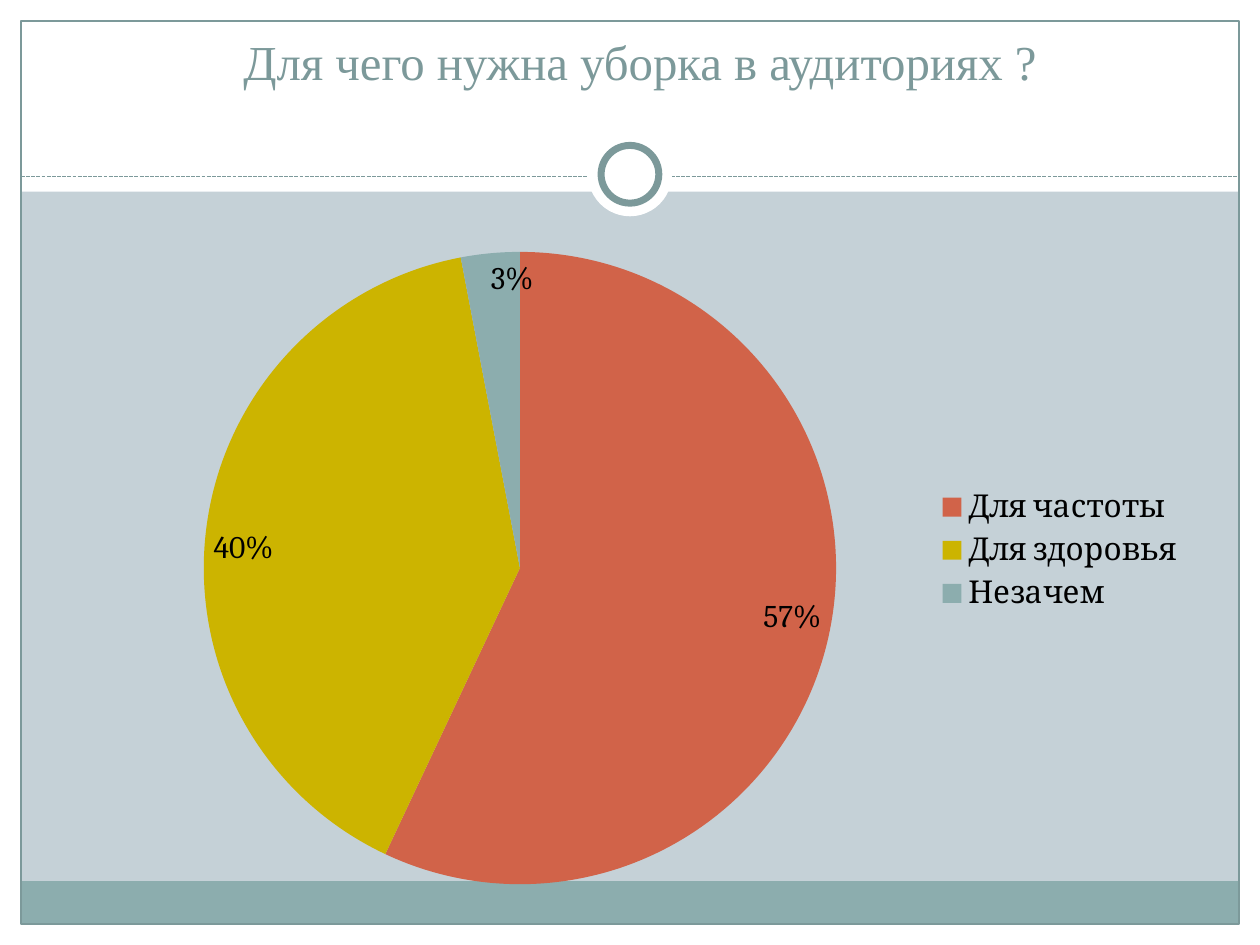
from dataclasses import dataclass

from lxml import etree
from pptx import Presentation
from pptx.chart.data import CategoryChartData
from pptx.dml.color import RGBColor
from pptx.enum import chart as ch
from pptx.enum import dml, shapes, text
from pptx.oxml import parse_xml
from pptx.oxml.ns import nsdecls, qn
from pptx.util import Pt

WHITE = RGBColor(0xFF, 0xFF, 0xFF)
BLACK = RGBColor(0x00, 0x00, 0x00)
MIST = RGBColor(0xC5, 0xD1, 0xD7)
SAGE = RGBColor(0x8C, 0xAD, 0xAE)
SLATE = RGBColor(0x7C, 0x99, 0x9A)
BRICK = RGBColor(0xD1, 0x63, 0x49)
MUSTARD = RGBColor(0xCC, 0xB4, 0x00)

WIDTH, HEIGHT, MARGIN = 720, 540, 12
HEADER_HEIGHT = 109.5
RULE_Y = 100.8
RECT = shapes.MSO_SHAPE.RECTANGLE
OVAL = shapes.MSO_SHAPE.OVAL


@dataclass
class Decoration:
    left: float
    top: float
    width: float
    height: float
    fill: RGBColor | None = WHITE
    line_width: float = 0
    preset: shapes.MSO_SHAPE = RECT


@dataclass
class Answer:
    label: str
    share: float
    color: RGBColor


def circle(diameter: float, line_width: float = 0) -> Decoration:
    """Circle centred on the slide's width, just above the dashed rule."""
    return Decoration((WIDTH - diameter) / 2, 99.6 - diameter / 2,
                      diameter, diameter, WHITE, line_width, OVAL)


FRAME = [
    Decoration(0, HEIGHT - MARGIN, WIDTH, MARGIN),
    Decoration(0, 0, WIDTH, HEADER_HEIGHT),
    Decoration(0, 0, MARGIN, HEIGHT),
    Decoration(WIDTH - MARGIN, 0, MARGIN, HEIGHT),
    Decoration(MARGIN, 503.5, WIDTH - 2 * MARGIN, 24.5, SAGE),
    Decoration(MARGIN, MARGIN, WIDTH - 2 * MARGIN, HEIGHT - 2 * MARGIN, None, 0.75),
]
MEDALLION = [circle(48), circle(33, 4)]

ANSWERS = [
    Answer("Для частоты", 0.57, BRICK),
    Answer("Для здоровья", 0.40, MUSTARD),
    Answer("Незачем", 0.03, SAGE),
]


def draw_decoration(slide, item: Decoration) -> None:
    shape = slide.shapes.add_shape(
        item.preset, Pt(item.left), Pt(item.top), Pt(item.width), Pt(item.height))
    shape.shadow.inherit = False
    if item.fill is None:
        shape.fill.background()
    else:
        shape.fill.solid()
        shape.fill.fore_color.rgb = item.fill
    if item.line_width:
        shape.line.color.rgb = SLATE
        shape.line.width = Pt(item.line_width)
    else:
        shape.line.fill.background()


def draw_rule(slide) -> None:
    rule = slide.shapes.add_connector(
        shapes.MSO_CONNECTOR.STRAIGHT,
        Pt(MARGIN), Pt(RULE_Y), Pt(WIDTH - MARGIN), Pt(RULE_Y))
    rule.line.color.rgb = SLATE
    rule.line.width = Pt(0.75)
    rule.line.dash_style = dml.MSO_LINE.SQUARE_DOT
    etree.SubElement(rule._element.spPr, qn("a:effectLst"))


def place_title(slide, wording: str) -> None:
    title = slide.shapes.title
    title.left, title.top, title.width, title.height = Pt(70.5), Pt(18), Pt(590.5), Pt(70.5)
    slide.shapes._spTree.append(title._element)  # in front of the white header
    frame = title.text_frame
    frame.text = wording
    frame.word_wrap = True
    frame.auto_size = text.MSO_AUTO_SIZE.NONE
    frame.vertical_anchor = text.MSO_ANCHOR.TOP
    frame.margin_top = 0
    heading = frame.paragraphs[0]
    heading.alignment = text.PP_ALIGN.CENTER
    heading.font.name = "Times New Roman"
    heading.font.size = Pt(27.9)
    heading.font.color.rgb = SLATE


def fix_plot_area(chart, **box: float) -> None:
    """Set the inner plot area as fractions of the chart's size."""
    plot_area = chart._chartSpace.chart.plotArea
    for layout in plot_area.findall(qn("c:layout")):
        plot_area.remove(layout)
    places = "".join(f'<c:{key} val="{value}"/>' for key, value in box.items())
    plot_area.insert(0, parse_xml(
        f'<c:layout {nsdecls("c")}><c:manualLayout><c:layoutTarget val="inner"/>'
        f'<c:xMode val="edge"/><c:yMode val="edge"/>{places}'
        '</c:manualLayout></c:layout>'))


def draw_pie(slide, answers: list[Answer]) -> None:
    data = CategoryChartData(number_format="0%")
    data.categories = [answer.label for answer in answers]
    data.add_series("Series 1", [answer.share for answer in answers])
    chart = slide.shapes.add_chart(
        ch.XL_CHART_TYPE.PIE, Pt(60), Pt(111.5), Pt(624), Pt(406), data).chart
    chart.has_title = False
    chart.font.name = "Cambria"
    chart.font.size = Pt(18)
    chart.font.color.rgb = BLACK
    chart.has_legend = True
    chart.legend.position = ch.XL_LEGEND_POSITION.RIGHT
    chart.legend.include_in_layout = False
    fix_plot_area(chart, x=0.09, y=0.08, w=0.58, h=0.89)

    pie = chart.plots[0]
    pie.vary_by_categories = True
    pie.has_data_labels = True
    labels = pie.data_labels
    labels.show_value = True
    labels.show_percentage = False
    labels.number_format = "0%"
    labels.number_format_is_linked = False
    labels.position = ch.XL_LABEL_POSITION.INSIDE_END
    for index, answer in enumerate(answers):
        slice_format = pie.series[0].points[index].format
        slice_format.fill.solid()
        slice_format.fill.fore_color.rgb = answer.color
        slice_format.line.fill.background()


def main() -> None:
    deck = Presentation()
    deck.slide_width, deck.slide_height = Pt(WIDTH), Pt(HEIGHT)
    slide = deck.slides.add_slide(deck.slide_layouts[5])
    slide.background.fill.solid()
    slide.background.fill.fore_color.rgb = MIST
    for item in FRAME:
        draw_decoration(slide, item)
    draw_rule(slide)
    for item in MEDALLION:
        draw_decoration(slide, item)
    place_title(slide, "Для чего нужна уборка в аудиториях ?")
    draw_pie(slide, ANSWERS)
    deck.save("out.pptx")


if __name__ == "__main__":
    main()
